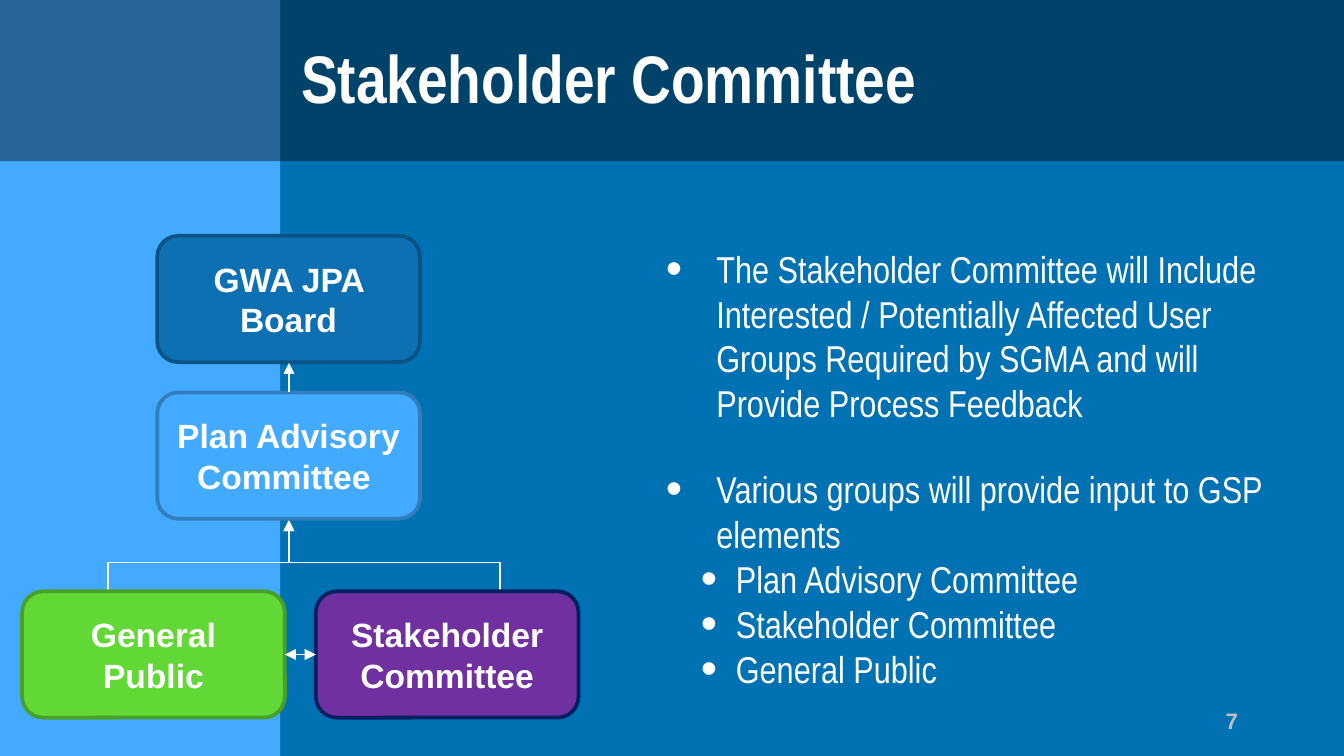
"""Build the Stakeholder Committee slide with its reporting chart and bullet list."""
from lxml.etree import SubElement
from pptx import Presentation
from pptx.dml.color import RGBColor
from pptx.enum.shapes import MSO_CONNECTOR, MSO_SHAPE
from pptx.enum.text import MSO_ANCHOR, MSO_AUTO_SIZE, PP_ALIGN
from pptx.oxml.ns import qn
from pptx.util import Pt

PX = 4572
THEME = {
    "background": "0071B2", "side": "43AAFF", "header": "000000",
    "text": "FFFFFF", "number": "C0C0C0",
    "heading_font": "Arial Narrow", "label_font": "Arial",
    "title_size": 36, "body_size": 20, "label_size": 18, "number_size": 12,
}


def add_run(paragraph, text, font_name, size, color=THEME["text"], bold=False):
    run = paragraph.add_run()
    run.text = text
    run.font.name = font_name
    run.font.size = Pt(size)
    run.font.bold = bold
    run.font.color.rgb = RGBColor.from_string(color)


def add_arrow(kind, start, end, ends=("tailEnd",)):
    connector = slide.shapes.add_connector(kind, *(round(value * PX) for value in (*start, *end)))
    connector.line.color.rgb = RGBColor.from_string(THEME["text"])
    connector.line.width = Pt(0.75)
    line = connector.line._get_or_add_ln()
    for name in ends:
        SubElement(line, qn(f"a:{name}")).set("type", "triangle")
    SubElement(connector._element.spPr, qn("a:effectLst"))
    return connector


presentation = Presentation()
presentation.slide_width = 2000 * PX
presentation.slide_height = 1125 * PX
slide = presentation.slides.add_slide(presentation.slide_layouts[1])
slide.background.fill.solid()
slide.background.fill.fore_color.rgb = RGBColor.from_string(THEME["background"])

bands = [(417, 1125, THEME["side"], 100), (2000, 240, THEME["header"], 40)]
for index, (width, height, color, opacity) in enumerate(bands):
    band = slide.shapes.add_shape(MSO_SHAPE.RECTANGLE, 0, 0, width * PX, height * PX)
    band.shadow.inherit = False
    band.fill.solid()
    band.fill.fore_color.rgb = RGBColor.from_string(color)
    band.line.fill.background()
    if opacity < 100:
        color_element = band._element.spPr.find(f".//{qn('a:srgbClr')}")
        SubElement(color_element, qn("a:alpha")).set("val", str(opacity * 1000))
    slide.shapes._spTree.insert(2 + index, band._element)

title = slide.shapes.title
title.left, title.top, title.width, title.height = 440 * PX, 20 * PX, 1310 * PX, 188 * PX
title_frame = title.text_frame
title_frame.auto_size = MSO_AUTO_SIZE.NONE
title_frame.vertical_anchor = MSO_ANCHOR.MIDDLE
title_frame.margin_left = title_frame.margin_right = 8 * PX
title_frame.margin_top = title_frame.margin_bottom = 4 * PX
title_frame.paragraphs[0].alignment = PP_ALIGN.LEFT
add_run(title_frame.paragraphs[0], "Stakeholder Committee", THEME["heading_font"],
        THEME["title_size"], bold=True)

body = slide.placeholders[1]
body.left, body.top, body.width, body.height = 971 * PX, 356 * PX, 950 * PX, 952 * PX
body_frame = body.text_frame
body_frame.auto_size = MSO_AUTO_SIZE.NONE
bullets = [
    (0, 0, "The Stakeholder Committee will Include Interested / Potentially Affected User "
           "Groups Required by SGMA and will Provide Process Feedback"),
    (0, 22.1, "Various groups will provide input to GSP elements"),
    (1, 0, "Plan Advisory Committee"),
    (1, 0, "Stakeholder Committee"),
    (1, 0, "General Public"),
]
indents = [(75, 75), (104, 52)]
for index, (level, space_before, text) in enumerate(bullets):
    paragraph = body_frame.add_paragraph() if index else body_frame.paragraphs[0]
    paragraph.level = level
    paragraph.space_before = Pt(space_before)
    margin, hanging = indents[level]
    properties = paragraph._p.get_or_add_pPr()
    properties.set("marL", str(margin * PX))
    properties.set("indent", str(-hanging * PX))
    SubElement(properties, qn("a:buSzPct")).set("val", "125000")
    SubElement(properties, qn("a:buFont")).set("typeface", THEME["label_font"])
    SubElement(properties, qn("a:buChar")).set("char", "•")
    add_run(paragraph, text, THEME["heading_font"], THEME["body_size"])

box_width, box_height = 391, 188
center_x, advisory_top, group_top = 430, 584, 880
advisory_bottom = advisory_top + box_height + 2
elbow_bottom = 900
for start_x in (161, 744):
    middle_x = (start_x + center_x) / 2
    middle_y = (elbow_bottom + advisory_bottom) / 2
    half_rise = (elbow_bottom - advisory_bottom) / 2
    half_span = (start_x - center_x) / 2
    elbow = add_arrow(MSO_CONNECTOR.ELBOW, (middle_x - half_rise, middle_y + half_span),
                      (middle_x + half_rise, middle_y - half_span))
    elbow._element.spPr.find(qn("a:xfrm")).set("rot", str(270 * 60000))

boxes = [
    ("GWA JPA Board", 234, 351, "0D70B3", "0A5384"),
    ("Plan Advisory Committee ", 234, advisory_top, "42AAFF", "317EBD"),
    ("Stakeholder Committee", 470, group_top, "7030A0", "002060"),
    ("General Public", 33, group_top, "61D836", "48A028"),
]
for text, left, top, fill, outline in boxes:
    box = slide.shapes.add_shape(MSO_SHAPE.ROUNDED_RECTANGLE, left * PX, top * PX,
                                 box_width * PX, box_height * PX)
    box.shadow.inherit = False
    box.fill.solid()
    box.fill.fore_color.rgb = RGBColor.from_string(fill)
    box.line.color.rgb = RGBColor.from_string(outline)
    box.line.width = Pt(2)
    frame = box.text_frame
    frame.word_wrap = True
    frame.vertical_anchor = MSO_ANCHOR.MIDDLE
    frame.margin_left = frame.margin_right = 16 * PX
    frame.paragraphs[0].alignment = PP_ALIGN.CENTER
    add_run(frame.paragraphs[0], text, THEME["label_font"], THEME["label_size"], bold=True)

add_arrow(MSO_CONNECTOR.STRAIGHT, (center_x, advisory_top), (center_x, 540))
add_arrow(MSO_CONNECTOR.STRAIGHT, (424, 974), (470, 974), ("headEnd", "tailEnd"))

number_box = slide.shapes.add_textbox(1412 * PX, 1043 * PX, 450 * PX, 60 * PX)
number_box.text_frame.word_wrap = True
number_paragraph = number_box.text_frame.paragraphs[0]
number_paragraph.alignment = PP_ALIGN.RIGHT
add_run(number_paragraph, "7", THEME["label_font"], THEME["number_size"], THEME["number"], True)

presentation.save("out.pptx")
